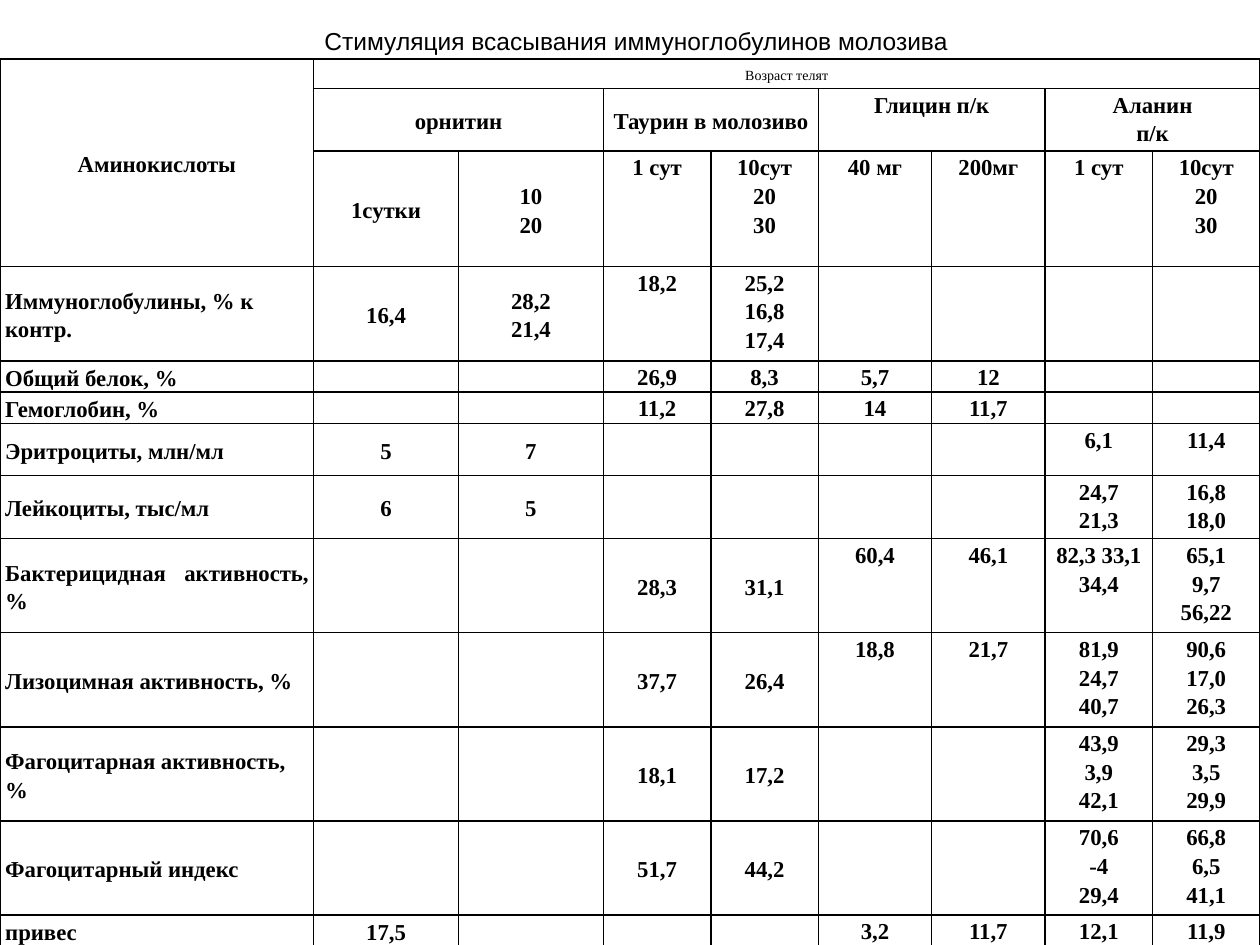
from lxml import etree
from pptx import Presentation
from pptx.dml.color import RGBColor
from pptx.enum import text
from pptx.oxml.ns import qn
from pptx.util import Pt

BLACK = "000000"


def style(p, size, name, bold=False):
    p.font.size = Pt(size)
    p.font.name = name
    p.font.bold = bold
    p.font.color.rgb = RGBColor.from_string(BLACK)


def add_borders(cell):
    """Draw a 1 pt black line on each side of the cell."""
    tc_pr = cell._tc.get_or_add_tcPr()
    for i, side in enumerate(("lnL", "lnR", "lnT", "lnB")):
        ln = etree.Element(qn(f"a:{side}"), w=str(Pt(1)))
        fill = etree.SubElement(ln, qn("a:solidFill"))
        etree.SubElement(fill, qn("a:srgbClr"), val=BLACK)
        tc_pr.insert(i, ln)


# One string per row; "|" parts the cells and "/" the paragraphs.
# "п;к" stands for "п/к".
rows = [
    "Аминокислоты|Возраст телят|||||||",
    "|орнитин||Таурин в молозиво||Глицин п;к||Аланин/п;к|",
    "|1сутки|10/20|1 сут|10сут/20/30|40 мг|200мг|1 сут|10сут/20/30",
    "Иммуноглобулины, % к контр.|16,4|28,2/21,4|18,2|25,2/16,8/17,4||||",
    "Общий белок, %|||26,9|8,3|5,7|12||",
    "Гемоглобин, %|||11,2|27,8|14|11,7||",
    "Эритроциты, млн;мл|5|7|||||6,1|11,4",
    "Лейкоциты, тыс;мл|6|5|||||24,7/21,3|16,8/18,0",
    "Бактерицидная активность, %|||28,3|31,1|60,4|46,1|82,3 33,1/34,4|65,1/9,7/56,22",
    "Лизоцимная активность, %|||37,7|26,4|18,8|21,7|81,9/24,7/40,7|90,6/17,0/26,3",
    "Фагоцитарная активность, %|||18,1|17,2|||43,9/3,9/42,1|29,3/3,5/29,9",
    "Фагоцитарный индекс|||51,7|44,2|||70,6/-4/29,4|66,8/6,5/41,1",
    "привес|17,5||||3,2|11,7|12,1|11,9",
]
widths = [179.2, 82.8, 82.8, 61.4, 61.4, 64.8, 64.8, 61.4, 61.4]
heights = [16.8, 35.8, 65.9, 54, 17.9, 17.9, 29.7, 36.1] + [53.8] * 4 + [17.9]
merges = [(0, 0, 2, 0), (0, 1, 0, 8)] + [(1, c, 1, c + 1) for c in (1, 3, 5, 7)]
middle_rows = (1, 8, 9, 10, 11)  # rows where the taurine columns are centred
justified_rows = (8, 9)

prs = Presentation()
prs.slide_width, prs.slide_height = Pt(720), Pt(540)
s = prs.slides.add_slide(prs.slide_layouts[6])

table = s.shapes.add_table(len(rows), len(widths), 0, Pt(33.8),
                           Pt(720), Pt(sum(heights))).table
table.first_row = table.horz_banding = False
for column, width in zip(table.columns, widths):
    column.width = Pt(width)
for row, height in zip(table.rows, heights):
    row.height = Pt(height)

for r, line in enumerate(rows):
    for c, content in enumerate(line.split("|")):
        cell = table.cell(r, c)
        cell.fill.background()
        add_borders(cell)
        cell.margin_left = cell.margin_right = Pt(3)
        cell.margin_top = Pt(0.5)
        cell.margin_bottom = 0
        if c < 3 or r == 0 or (c < 5 and r in middle_rows):
            cell.vertical_anchor = text.MSO_ANCHOR.MIDDLE
        tf = cell.text_frame
        tf.text = content.replace("/", "\n").replace(";", "/")
        size = 8 if (r, c) == (0, 1) else 13
        for p in tf.paragraphs:
            style(p, size, "Times New Roman", bold=size == 13)
            p.line_spacing = 1.15
            if c > 0 or r == 0:
                p.alignment = text.PP_ALIGN.CENTER
            elif r in justified_rows:
                p.alignment = text.PP_ALIGN.JUSTIFY
            if not content:  # keeps empty cells from stretching the row
                end = etree.SubElement(p._p, qn("a:endParaRPr"), sz=str(size * 100))
                etree.SubElement(end, qn("a:latin"), typeface="Times New Roman")

for top, left, bottom, right in merges:
    table.cell(top, left).merge(table.cell(bottom, right))

title = s.shapes.add_textbox(Pt(140.7), Pt(11), Pt(409.7), Pt(24.5))
tf = title.text_frame
tf.word_wrap = False
tf.auto_size = text.MSO_AUTO_SIZE.SHAPE_TO_FIT_TEXT
tf.vertical_anchor = text.MSO_ANCHOR.MIDDLE
p = tf.paragraphs[0]
p.text = "Стимуляция всасывания иммуноглобулинов молозива"
p.alignment = text.PP_ALIGN.CENTER
style(p, 14, "Arial")
p._p.get_or_add_pPr().set("indent", str(Pt(36)))

prs.save("out.pptx")
